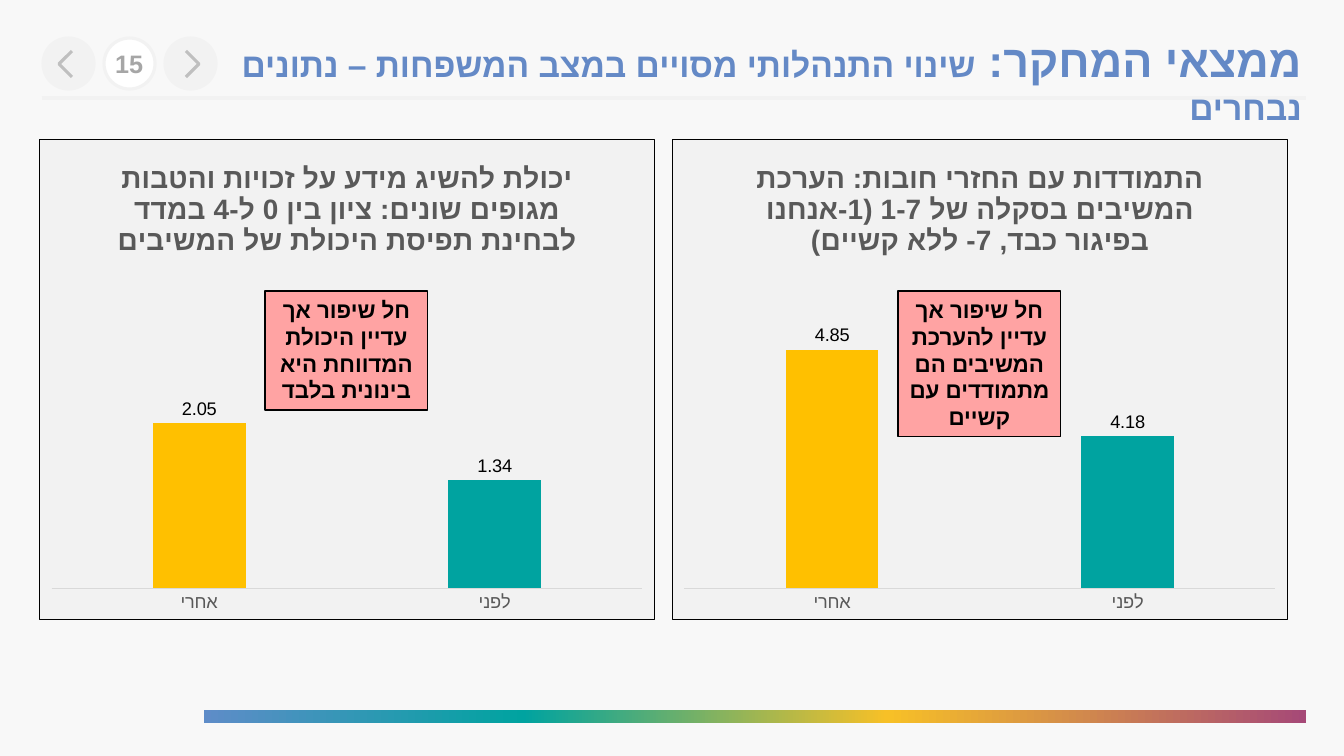
from dataclasses import dataclass

from lxml import etree
from pptx import Presentation
from pptx import util as u
from pptx.chart.data import CategoryChartData
from pptx.dml.color import RGBColor
from pptx.enum import chart as charts, shapes, text
from pptx.oxml import parse_xml
from pptx.oxml.ns import nsdecls, qn

EMU_PER_PX = 914400 / 100.8
BLUE, TEAL, AMBER = "6489C6", "00A3A0", "FFC000"
PALE, GREY, BLACK, WHITE = "F2F2F2", "595959", "000000", "FFFFFF"
RAINBOW = [(0, "5E8CC8"), (29, "00A3A0"), (62, "F7C027"), (100, "A64977")]


@dataclass
class Panel:
    left: int
    heading: str
    before: float
    after: float
    axis_min: float
    axis_max: float
    callout: str
    callout_left: int
    callout_height: int


@dataclass
class Arrow:
    left: int
    tip: int
    tail: int


PANELS = [
    Panel(672, "התמודדות עם החזרי חובות: הערכת המשיבים בסקלה של 1-7 (1-אנחנו בפיגור כבד, 7- ללא קשיים)",
          4.18, 4.85, 3, 5.5,
          "חל שיפור אך עדיין להערכת המשיבים הם מתמודדים עם קשיים", 898, 146),
    Panel(39, "יכולת להשיג מידע על זכויות והטבות מגופים שונים: ציון בין 0 ל-4 במדד לבחינת תפיסת היכולת של המשיבים",
          1.34, 2.05, 0, 4,
          "חל שיפור אך עדיין היכולת המדווחת היא בינונית בלבד", 265, 119),
]
ARROWS = [Arrow(165, 199, 186), Arrow(43, 59, 72)]
PANEL_TOP, PANEL_WIDTH, PANEL_HEIGHT = 139, 616, 481
PLOT = {"x": 12, "y": 127, "w": 592, "h": 323}


def px(length: float) -> u.Emu:
    return u.Emu(round(length * EMU_PER_PX))


def area(left: int, top: int, width: int, height: int) -> list:
    return [px(length) for length in (left, top, width, height)]


def rgb(colour: str) -> RGBColor:
    return RGBColor.from_string(colour)


def style_font(font, size: float | None, colour: str, bold: bool = False, name: str = "Arial") -> None:
    font.name, font.bold = name, bold
    if size:
        font.size = u.Pt(size)
    font.color.rgb = rgb(colour)
    # Right-to-left text takes the complex-script typeface
    script = etree.Element(qn("a:cs"), typeface="Arial")
    font._element.find(qn("a:latin")).addnext(script)


def set_rtl(para, alignment=text.PP_ALIGN.RIGHT) -> None:
    para.alignment = alignment
    para._p.get_or_add_pPr().set("rtl", "1")


def style_line(line, colour: str, width: float) -> None:
    line.color.rgb = rgb(colour)
    line.width = u.Pt(width)


def add_plain(page, kind, place: list, fill: str, line: str | None = None, width: float = 2.25):
    shape = page.shapes.add_shape(kind, *place)
    shape.shadow.inherit = False
    shape.fill.solid()
    shape.fill.fore_color.rgb = rgb(fill)
    if line:
        style_line(shape.line, line, width)
    else:
        shape.line.fill.background()
    return shape


def add_rainbow(page) -> None:
    bar = add_plain(page, shapes.MSO_SHAPE.RECTANGLE, area(204, 710, 1102, 13), WHITE)
    stops = "".join(f'<a:gs pos="{pos * 1000}"><a:srgbClr val="{colour}"/></a:gs>'
                    for pos, colour in RAINBOW)
    gradient = parse_xml(f'<a:gradFill {nsdecls("a")} rotWithShape="1"><a:gsLst>{stops}</a:gsLst>'
                         '<a:lin ang="0" scaled="0"/></a:gradFill>')
    solid = bar._element.spPr.find(qn("a:solidFill"))
    solid.getparent().replace(solid, gradient)


def add_arrow(page, arrow: Arrow) -> None:
    add_plain(page, shapes.MSO_SHAPE.OVAL, area(arrow.left, 38, 51, 51), PALE, PALE)
    builder = page.shapes.build_freeform(arrow.tail, 51, scale=EMU_PER_PX)
    builder.add_line_segments([(arrow.tip, 64), (arrow.tail, 77)], close=False)
    chevron = builder.convert_to_shape()
    chevron.shadow.inherit = False
    chevron.fill.background()
    style_line(chevron.line, "BFBFBF", 2.25)


def add_header(page) -> None:
    for arrow in ARROWS:
        add_arrow(page, arrow)
    add_plain(page, shapes.MSO_SHAPE.OVAL, area(104, 38, 51, 51), WHITE, PALE)

    # Slide number, centred in its circle
    box = page.shapes.add_textbox(*area(105, 39, 48, 48))
    frame = box.text_frame
    frame.word_wrap = True
    frame.margin_left = frame.margin_right = 0
    frame.vertical_anchor = text.MSO_ANCHOR.MIDDLE
    para = frame.paragraphs[0]
    para.text = "15"
    set_rtl(para, text.PP_ALIGN.CENTER)
    style_font(para.font, 18, "A6A6A6", True, "Lato")

    # Rule under the header
    rule = page.shapes.add_connector(shapes.MSO_CONNECTOR.STRAIGHT, px(42), px(98), px(1306), px(98))
    style_line(rule.line, PALE, 2.25)
    etree.SubElement(rule._element.spPr, qn("a:effectLst"))


def add_title(page) -> None:
    title = page.shapes.title
    title.left, title.top, title.width, title.height = area(214, 28, 1098, 65)
    frame = title.text_frame
    frame.word_wrap = True
    frame.auto_size = text.MSO_AUTO_SIZE.NONE
    frame.vertical_anchor = text.MSO_ANCHOR.TOP
    para = frame.paragraphs[0]
    set_rtl(para)
    style_font(para.font, None, BLUE, True)
    for words, size in [("ממצאי המחקר: ", 32),
                        ("שינוי התנהלותי מסויים במצב המשפחות – נתונים נבחרים", 24)]:
        span = para.add_run()
        span.text = words
        span.font.size = u.Pt(size)
    page.shapes._spTree.append(title._element)


def frame_chart(chart) -> None:
    """Give the chart its background, border and fixed plot area."""
    chart_part = chart._chartSpace.find(qn("c:chart"))
    chart_part.addnext(parse_xml(
        f'<c:spPr {nsdecls("c", "a")}><a:solidFill><a:srgbClr val="{PALE}"/></a:solidFill>'
        f'<a:ln w="9525"><a:solidFill><a:srgbClr val="{BLACK}"/></a:solidFill></a:ln></c:spPr>'))
    sizes = {"x": PANEL_WIDTH, "y": PANEL_HEIGHT, "w": PANEL_WIDTH, "h": PANEL_HEIGHT}
    places = "".join(f'<c:{key} val="{PLOT[key] / sizes[key]:.4f}"/>' for key in PLOT)
    plot_area = chart_part.find(qn("c:plotArea"))
    for layout in plot_area.findall(qn("c:layout")):
        plot_area.remove(layout)
    plot_area.insert(0, parse_xml(
        f'<c:layout {nsdecls("c")}><c:manualLayout><c:layoutTarget val="inner"/>'
        f'<c:xMode val="edge"/><c:yMode val="edge"/>{places}</c:manualLayout></c:layout>'))


def add_panel_chart(page, panel: Panel) -> None:
    data = CategoryChartData(number_format="0.00")
    data.categories = ["לפני", "אחרי"]
    data.add_series("Series 1", [panel.before, panel.after])
    place = area(panel.left, PANEL_TOP, PANEL_WIDTH, PANEL_HEIGHT)
    chart = page.shapes.add_chart(charts.XL_CHART_TYPE.COLUMN_CLUSTERED, *place, data).chart
    chart.has_legend = False
    style_font(chart.font, 13, GREY)
    frame_chart(chart)

    # Heading
    para = chart.chart_title.text_frame.paragraphs[0]
    para.text = panel.heading
    set_rtl(para, text.PP_ALIGN.CENTER)
    style_font(para.font, 20, GREY, True)
    chart.chart_title.include_in_layout = False

    # Axes
    categories, values = chart.category_axis, chart.value_axis
    categories.reverse_order = True
    categories.major_tick_mark = charts.XL_TICK_MARK.NONE
    style_font(categories.tick_labels.font, 13, GREY)
    style_line(categories.format.line, "D9D9D9", 0.75)
    values.has_major_gridlines = False
    values.minimum_scale, values.maximum_scale = panel.axis_min, panel.axis_max
    values.visible = False

    # Columns and their labels
    plot = chart.plots[0]
    plot.gap_width, plot.overlap, plot.vary_by_categories = 219, -27, False
    series = plot.series[0]
    for index, colour in enumerate([TEAL, AMBER]):
        fill = series.points[index].format.fill
        fill.solid()
        fill.fore_color.rgb = rgb(colour)
    labels = series.data_labels
    labels.show_value = True
    labels.position = charts.XL_LABEL_POSITION.OUTSIDE_END
    labels.number_format, labels.number_format_is_linked = "0.00", False
    style_font(labels.font, 13, BLACK)


def add_callout(page, panel: Panel) -> None:
    place = area(panel.callout_left, 291, 163, panel.callout_height)
    box = add_plain(page, shapes.MSO_SHAPE.RECTANGLE, place, "FFA3A3", BLACK, 0.75)
    box.text_frame.word_wrap = True
    box.text_frame.vertical_anchor = text.MSO_ANCHOR.TOP
    para = box.text_frame.paragraphs[0]
    para.text = panel.callout
    set_rtl(para, text.PP_ALIGN.CENTER)
    style_font(para.font, 16, BLACK, True)


def main() -> None:
    deck = Presentation()
    deck.slide_width, deck.slide_height = px(1344), px(756)
    page = deck.slides.add_slide(deck.slide_layouts[5])
    page.background.fill.solid()
    page.background.fill.fore_color.rgb = rgb("F8F8F8")
    add_header(page)
    add_rainbow(page)
    for panel in PANELS:
        add_panel_chart(page, panel)
        add_callout(page, panel)
    add_title(page)
    deck.save("out.pptx")


if __name__ == "__main__":
    main()
